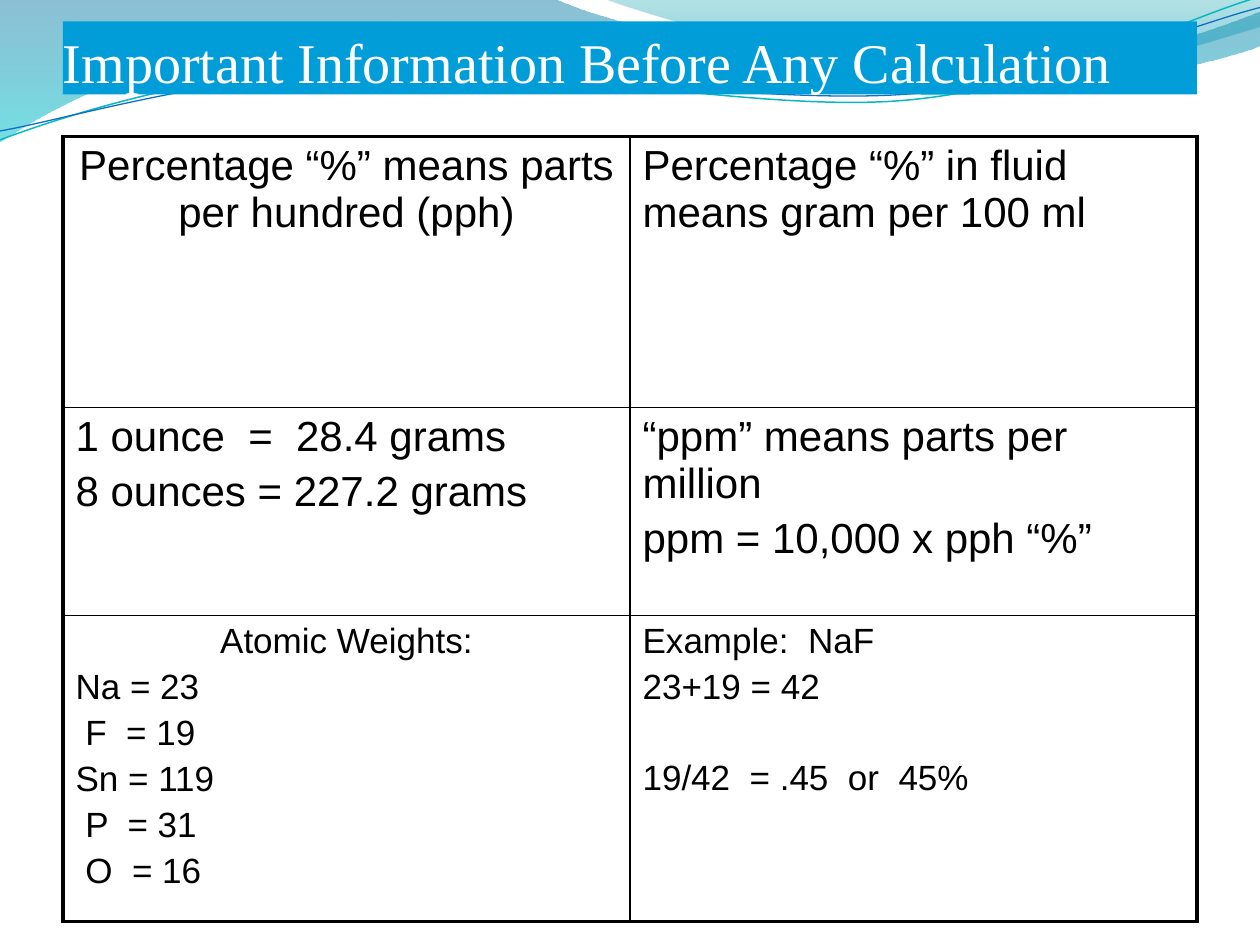
from dataclasses import dataclass
from math import cos, radians, sin
from lxml.etree import SubElement
from pptx import Presentation
from pptx.dml.color import RGBColor
from pptx.enum.text import MSO_ANCHOR, PP_ALIGN
from pptx.oxml.ns import qn
from pptx.util import Inches, Pt

COLORS = {
    "black": "000000", "white": "FFFFFF", "title": "009DD9",
    "ocean": "0074A1", "aqua": "00C6CF", "teal": "00A1A9", "azure": "008BBF",
    "cyan": "0AB8BF", "blue": "0F6FC6",
}
TILT = 2.7


@dataclass
class Wave:
    start: tuple
    steps: list
    stops: tuple = ()
    line: tuple = ()
    mid: tuple = ()


@dataclass
class Entry:
    lines: list
    size: int = 24
    center: bool = False
    gap: float = 0


WAVES = [
    Wave((0, -0.01), [
        (4.4, -0.01), (4.76, 0.17, 6.64, 0.63, 7.58, 0.63),
        (8.53, 0.63, 9.58, 0.26, 10, 0.09), (10.01, 0.36),
        (9.83, 0.44, 8.7, 0.76, 7.46, 0.75), (6.22, 0.75, 3.82, 0.28, 2.57, 0.34),
        (1.29, 0.35, 0.46, 0.83, -0.01, 1.13), (0, -0.01),
    ], stops=((0, "ocean", 45), (1, "aqua", 55))),
    Wave((4.79, -0.01), [
        (5.09, 0.11, 6.82, 0.62, 7.69, 0.65), (8.56, 0.69, 9.61, 0.32, 10, 0.21),
        (10, 0), (4.79, -0.01),
    ], stops=((0, "teal", 30), (0.8, "azure", 45))),
    Wave((0, 1.11), [
        (0.48, 0.93, 1.58, 0.57, 2.77, 0.52), (3.95, 0.47, 5.93, 0.89, 7.13, 0.8),
        (8.33, 0.71, 9.38, 0.15, 9.98, -0.02),
    ], line=("cyan", 0.85), mid=(4.99, 0.58)),
    Wave((0, 1.04), [
        (0.47, 0.96, 1.64, 0.61, 2.83, 0.56), (4.03, 0.51, 5.97, 0.83, 7.17, 0.75),
        (8.36, 0.67, 9.41, 0.21, 10, 0.06),
    ], line=("blue", 0.75), mid=(5, 0.59)),
]

ROWS = [
    [Entry(["Percentage “%” means parts per hundred (pph)"], center=True),
     Entry(["Percentage “%” in fluid means gram per 100 ml"])],
    [Entry(["1 ounce  =  28.4 grams", "8 ounces = 227.2 grams"]),
     Entry(["“ppm” means parts per million", "ppm = 10,000 x pph “%”"])],
    [Entry(["Atomic Weights:", "Na = 23", " F  = 19", "Sn = 119", " P  = 31",
            " O  = 16"], 20, center=True),
     Entry(["Example:  NaF", "23+19 = 42", "19/42  = .45  or  45%"], 20, gap=30)],
]
WIDTHS = [4.5, 4.5]
HEIGHTS = [2.15, 1.65, 2.43]


def tint(name: str) -> RGBColor:
    """Return the named colour."""
    return RGBColor.from_string(COLORS[name])


def level(point: tuple, mid: tuple) -> tuple:
    """Return a point with the tilt about the middle taken out."""
    if not mid:
        return point
    x, y = point[0] - mid[0], point[1] - mid[1]
    c, s = cos(radians(TILT)), sin(radians(TILT))
    return mid[0] + x * c - y * s, mid[1] + x * s + y * c


def bend(shape, steps: list) -> None:
    """Turn each three-point step of the outline into a cubic curve."""
    lines = iter(list(shape.element.iter(qn("a:lnTo"))))
    for step in steps:
        group = [next(lines) for _ in range(len(step) // 2)]
        if len(group) == 1:
            continue
        curve = SubElement(group[0].getparent(), qn("a:cubicBezTo"))
        group[0].addprevious(curve)
        for line in group:
            curve.append(line[0])
            line.getparent().remove(line)


def draw_wave(slide, wave: Wave) -> None:
    """Draw one filled or outlined wave."""
    pairs = [wave.start] + [step[i:i + 2] for step in wave.steps
                            for i in range(0, len(step), 2)]
    first, *rest = [tuple(map(Inches, level(pair, wave.mid))) for pair in pairs]
    pen = slide.shapes.build_freeform(*first)
    pen.add_line_segments(rest, close=bool(wave.stops))
    shape = pen.convert_to_shape()
    bend(shape, wave.steps)
    shape.shadow.inherit = False
    if wave.line:
        name, width = wave.line
        shape.rotation = 360 - TILT
        shape.fill.background()
        shape.line.color.rgb = tint(name)
        shape.line.width = Pt(width)
        return
    shape.line.fill.background()
    shape.fill.gradient()
    shape.fill.gradient_angle = 270
    for stop, (place, name, _) in zip(shape.fill.gradient_stops, wave.stops):
        stop.position = place
        stop.color.rgb = tint(name)
    for node, (_, _, alpha) in zip(shape.element.iter(qn("a:srgbClr")), wave.stops):
        SubElement(node, qn("a:alpha"), val=str(alpha * 1000))


def add_text(para, text: str, size: int, font: str, color: str) -> None:
    """Add one styled run."""
    run = para.add_run()
    run.text = text
    run.font.size = Pt(size)
    run.font.name = font
    run.font.color.rgb = tint(color)


def draw_title(slide, text: str) -> None:
    """Draw the title bar."""
    box = slide.shapes.add_textbox(Inches(0.5), Inches(0.17), Inches(9), Inches(0.58))
    box.fill.solid()
    box.fill.fore_color.rgb = tint("title")
    frame = box.text_frame
    frame.word_wrap = True
    frame.vertical_anchor = MSO_ANCHOR.BOTTOM
    frame.margin_left = frame.margin_right = frame.margin_bottom = 0
    frame.margin_top = Inches(0.05)
    add_text(frame.paragraphs[0], text, 32, "Times New Roman", "white")


def add_edge(cell, side: str, width: float) -> None:
    """Add one cell border."""
    edge = SubElement(cell._tc.get_or_add_tcPr(), qn("a:ln" + side), w=str(Pt(width)))
    fill = SubElement(edge, qn("a:solidFill"))
    SubElement(fill, qn("a:srgbClr"), val=COLORS["black"])


def fill_cell(cell, entry: Entry) -> None:
    """Write the lines of one cell."""
    frame = cell.text_frame
    last = len(entry.lines) - 1
    for i, text in enumerate(entry.lines):
        para = frame.add_paragraph() if i else frame.paragraphs[0]
        para.alignment = PP_ALIGN.CENTER if entry.center and not i else PP_ALIGN.LEFT
        if i:
            para.space_before = Pt(entry.gap if entry.gap and i == last
                                   else entry.size * 0.2)
        add_text(para, text, entry.size, "Arial", "black")


def draw_table(slide) -> None:
    """Draw the table of facts."""
    rows, cols = len(HEIGHTS), len(WIDTHS)
    table = slide.shapes.add_table(rows, cols, Inches(0.5), Inches(13 / 12),
                                   Inches(sum(WIDTHS)), Inches(sum(HEIGHTS))).table
    table.first_row = table.horz_banding = False
    for col, width in zip(table.columns, WIDTHS):
        col.width = Inches(width)
    for r, height in enumerate(HEIGHTS):
        table.rows[r].height = Inches(height)
        for c in range(cols):
            cell = table.cell(r, c)
            outer = {"L": c == 0, "R": c == cols - 1, "T": r == 0, "B": r == rows - 1}
            for side, thick in outer.items():
                add_edge(cell, side, 2.25 if thick else 1)
            cell.fill.background()
            fill_cell(cell, ROWS[r][c])


def main() -> None:
    """Build and save the slide."""
    deck = Presentation()
    deck.slide_width, deck.slide_height = Inches(10), Inches(7.5)
    slide = deck.slides.add_slide(deck.slide_layouts[6])
    for wave in WAVES:
        draw_wave(slide, wave)
    draw_title(slide, "Important Information Before Any Calculation")
    draw_table(slide)
    deck.save("out.pptx")


if __name__ == "__main__":
    main()
